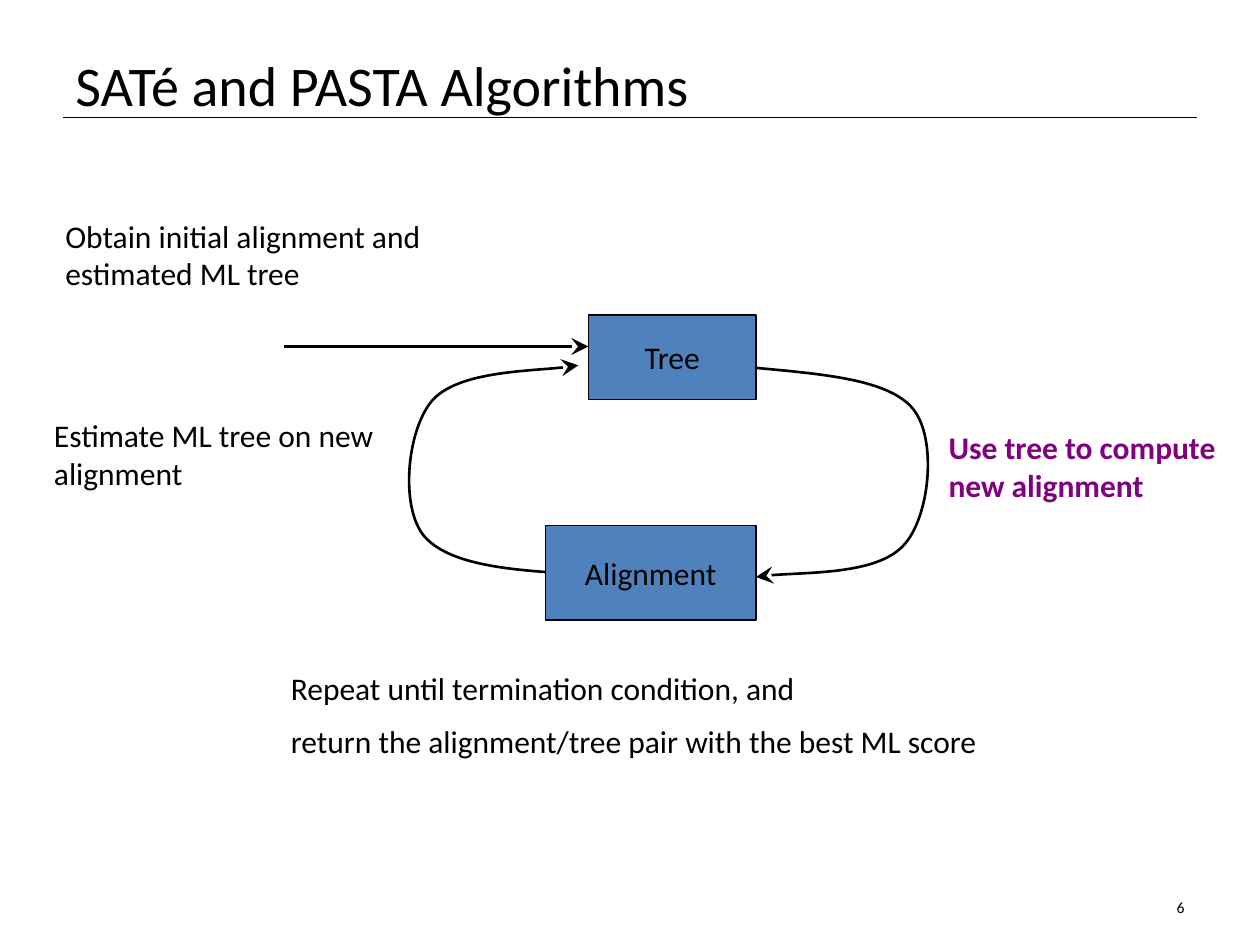
"""Build a slide showing the iterative loop of the SATé and PASTA algorithms."""
import pptx
import pptx.util
import pptx.dml.color
import pptx.enum.shapes
import pptx.enum.text
import pptx.oxml
import pptx.oxml.ns

Inches, Pt = pptx.util.Inches, pptx.util.Pt
ALIGN = pptx.enum.text.PP_ALIGN
FONT = "Calibri"
COLORS = {"ink": "000000", "box": "4F81BD", "accent": "800080"}

TITLE = ("SATé and PASTA Algorithms", (0.5, 0.3, 9, 0.63))
SLIDE_NUMBER = ("6", (7.17, 7.08, 2.33, 0.27))
STEPS = [
    (["Estimate ML tree on new alignment"], (0.33, 3.25, 3, 0.71), "ink"),
    (["Obtain initial alignment and estimated ML tree"], (0.42, 1.67, 3.67, 0.71), "ink"),
    (["Use tree to compute new alignment"], (7.43, 3.35, 2.57, 0.71), "accent"),
    (["Repeat until termination condition, and",
      "return the alignment/tree pair with the best ML score"], (2.21, 5.26, 5.81, 0.86), "ink"),
]
STATES = [("Tree", (4.67, 2.5, 1.33, 0.67)), ("Alignment", (4.33, 4.17, 1.67, 0.75))]
TITLE_RULE = ((0.5, 0.93), (9.5, 0.93))
START_ARROW = ((2.25, 2.75), (4.67, 2.75))
LOOP_ARROWS = [
    [(4.33, 4.54), (3.91, 4.51), (3.54, 4.45), (3.37, 4.26), (3.17, 4.03),
     (3.23, 3.41), (3.43, 3.18), (3.63, 2.95), (4.38, 2.94), (4.59, 2.9)],
    [(6, 2.92), (6.53, 2.97), (7.06, 3.01), (7.25, 3.25), (7.44, 3.49),
     (7.38, 4.11), (7.17, 4.33), (6.96, 4.56), (6.21, 4.54), (6, 4.58)],
]


def rgb(name):
    return pptx.dml.color.RGBColor.from_string(COLORS[name])


def write(frame, paragraphs, size=18, color="ink", bold=False, align=ALIGN.LEFT):
    for index, text in enumerate(paragraphs):
        paragraph = frame.add_paragraph() if index else frame.paragraphs[0]
        paragraph.text = text
        paragraph.alignment = align
        paragraph.space_before = Pt(size / 2 if index else 0)
        font = paragraph.font
        font.name, font.size, font.bold = FONT, Pt(size), bold
        font.color.rgb = rgb(color)


def add_text(slide, paragraphs, place, **style):
    frame = slide.shapes.add_textbox(*map(Inches, place)).text_frame
    frame.word_wrap = True
    write(frame, paragraphs, **style)
    return frame


def add_state(slide, label, place):
    state = slide.shapes.add_shape(
        pptx.enum.shapes.MSO_SHAPE.RECTANGLE, *map(Inches, place))
    state.shadow.inherit = False
    state.fill.solid()
    state.fill.fore_color.rgb = rgb("box")
    style_line(state.line, 0.75)
    state.text_frame.word_wrap = False
    state.text_frame.vertical_anchor = pptx.enum.text.MSO_ANCHOR.MIDDLE
    write(state.text_frame, [label], align=ALIGN.CENTER)


def style_line(line, width, arrow=False):
    line.color.rgb = rgb("ink")
    line.width = Pt(width)
    if arrow:
        head = pptx.oxml.parse_xml(
            f'<a:tailEnd {pptx.oxml.ns.nsdecls("a")} type="stealth" w="lg" len="lg"/>')
        line._get_or_add_ln().append(head)


def add_line(slide, ends, width, arrow=False):
    start, end = ends
    connector = slide.shapes.add_connector(
        pptx.enum.shapes.MSO_CONNECTOR.STRAIGHT, *map(Inches, start + end))
    style_line(connector.line, width, arrow)
    connector._element.spPr.append(
        pptx.oxml.parse_xml(f'<a:effectLst {pptx.oxml.ns.nsdecls("a")}/>'))


def add_loop_arrow(slide, points):
    start, *controls = [(Inches(x), Inches(y)) for x, y in points]
    builder = slide.shapes.build_freeform(*start)
    builder.add_line_segments(controls, close=False)
    loop = builder.convert_to_shape()
    loop.shadow.inherit = False
    loop.fill.background()
    style_line(loop.line, 1.5, arrow=True)
    segments = loop._element.spPr.findall(".//" + pptx.oxml.ns.qn("a:lnTo"))
    for first in range(0, len(segments), 3):
        curve = pptx.oxml.parse_xml(f'<a:cubicBezTo {pptx.oxml.ns.nsdecls("a")}/>')
        segments[first].addprevious(curve)
        for segment in segments[first:first + 3]:
            curve.append(segment[0])
            segment.getparent().remove(segment)


def main():
    deck = pptx.Presentation()
    deck.slide_width, deck.slide_height = Inches(10), Inches(7.5)
    slide = deck.slides.add_slide(deck.slide_layouts[6])

    add_line(slide, TITLE_RULE, 0.75)
    for points in LOOP_ARROWS:
        add_loop_arrow(slide, points)
    for label, place in STATES:
        add_state(slide, label, place)
    add_line(slide, START_ARROW, 1.5, arrow=True)
    for paragraphs, place, color in STEPS:
        add_text(slide, paragraphs, place, color=color, bold=color == "accent")

    title, place = TITLE
    heading = add_text(slide, [title], place, size=32)
    heading.paragraphs[0].line_spacing = 1.1
    number, place = SLIDE_NUMBER
    add_text(slide, [number], place, size=9, align=ALIGN.RIGHT)
    deck.save("out.pptx")


if __name__ == "__main__":
    main()
